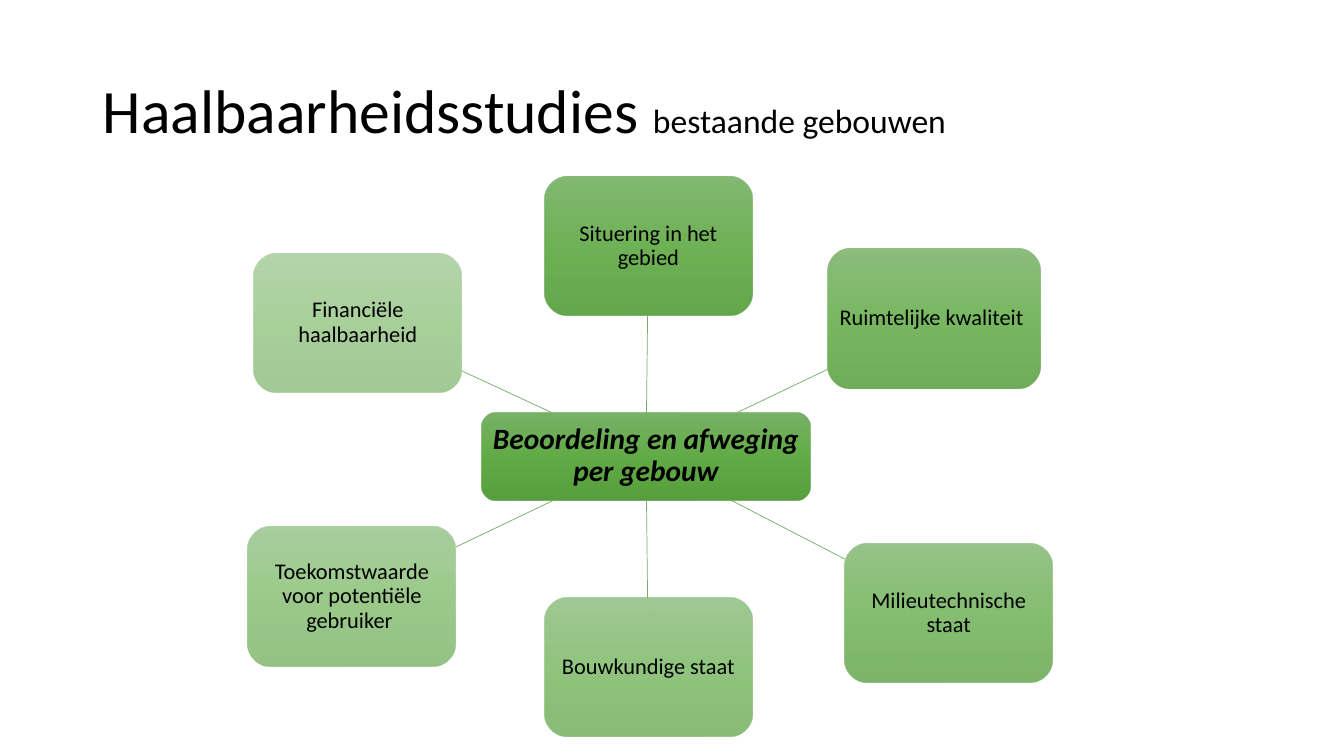
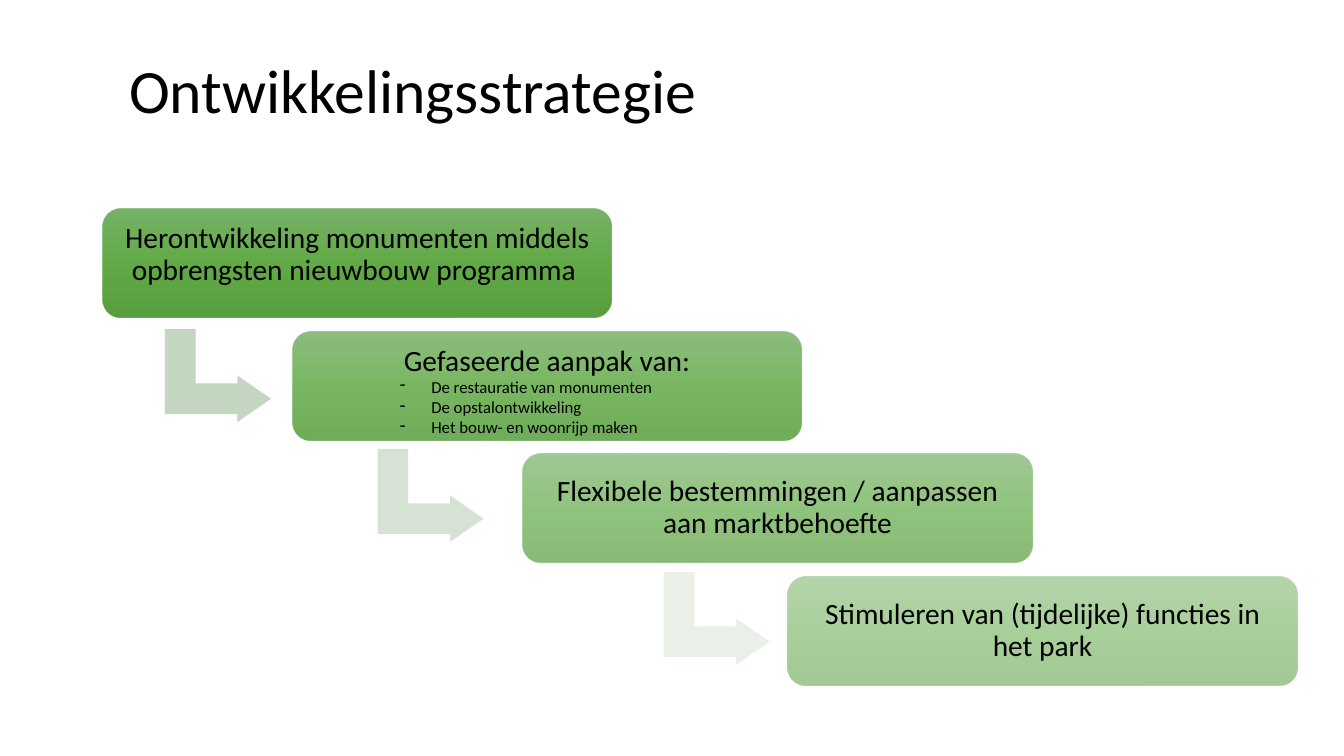
"""Build two slides: a hub of assessment criteria and a staircase of strategy steps."""
from pptx import Presentation
from pptx.dml.color import RGBColor
from pptx.enum.shapes import MSO_CONNECTOR, MSO_SHAPE
from pptx.enum.text import MSO_ANCHOR, MSO_AUTO_SIZE, PP_ALIGN
from pptx.oxml import parse_xml
from pptx.oxml.ns import nsdecls, qn
from pptx.oxml.xmlchemy import OxmlElement
from pptx.util import Cm, Pt

FONT = "Calibri"
BLACK = "000000"
LINE = "76AB69"
GRADIENT = [(0, "6BAA59"), (50, "52A334"), (100, "46952A")]

HUB = ("Beoordeling en afweging per gebouw", (12.14, 10.39, 8.28, 2.21))
CRITERIA = [
    ("Situering in het gebied", (13.72, 4.45, 5.24, 3.51)),
    ("Ruimtelijke kwaliteit ", (20.85, 6.27, 5.38, 3.51)),
    ("Milieutechnische staat", (21.29, 13.69, 5.24, 3.51)),
    ("Bouwkundige staat", (13.72, 15.06, 5.24, 3.51)),
    ("Toekomstwaarde voor potentiële gebruiker ", (6.25, 13.28, 5.24, 3.51)),
    ("Financiële haalbaarheid", (6.4, 6.38, 5.24, 3.51)),
]

STEPS = [
    ("Herontwikkeling monumenten middels opbrengsten nieuwbouw programma ", 2.59, MSO_ANCHOR.TOP),
    ("Gefaseerde aanpak van:", 7.37, MSO_ANCHOR.TOP),
    ("Flexibele bestemmingen / aanpassen aan marktbehoefte", 13.18, MSO_ANCHOR.MIDDLE),
    ("Stimuleren van (tijdelijke) functies in het park", 19.86, MSO_ANCHOR.MIDDLE),
]
STEP_TOP, STEP_PITCH, STEP_W, STEP_H = 5.26, 3.09, 12.83, 2.74
ARROWS = [(4.32, 8.13, "C3D6BF"), (9.68, 11.15, "D6E3D4"), (16.89, 14.25, "EAF0E8")]
ARROW_W, ARROW_H = 2.34, 2.67
PHASES = ["De restauratie van monumenten", "De opstalontwikkeling", "Het bouw- en woonrijp maken"]
PHASES_BOX = (9.83, 9.37, 7.7, 1.8)


def rgb(value):
    """Return a colour from a hex string."""
    return RGBColor.from_string(value)


def cm(values):
    """Convert numbers to centimetre lengths."""
    return [Cm(v) for v in values]


def add_run(p, text, size, bold=None, italic=None):
    """Append one formatted run to a paragraph."""
    r = p.add_run()
    r.text = text
    r.font.name, r.font.size = FONT, Pt(size)
    r.font.bold, r.font.italic = bold, italic
    r.font.color.rgb = rgb(BLACK)


def add_slide(prs, box, runs):
    """Add a title-only slide with its title placed and filled."""
    s = prs.slides.add_slide(prs.slide_layouts[5])
    title = s.shapes.title
    title.left, title.top, title.width, title.height = cm(box)
    tf = title.text_frame
    tf.auto_size, tf.vertical_anchor = MSO_AUTO_SIZE.NONE, MSO_ANCHOR.MIDDLE
    p = tf.paragraphs[0]
    p.alignment, p.line_spacing = PP_ALIGN.LEFT, 0.9
    for text, size in runs:
        add_run(p, text, size)
    return s


def fade(i, last):
    """Return the opacity of box i, from 90 down to 50 percent."""
    return 90 - 40 * i / last


def add_box(s, box, text, size, opacity, margin, anchor=MSO_ANCHOR.MIDDLE, strong=None):
    """Add a rounded box with a translucent green gradient and centred text."""
    sp = s.shapes.add_shape(MSO_SHAPE.ROUNDED_RECTANGLE, *cm(box))
    stops = "".join(
        f'<a:gs pos="{pos * 1000}"><a:srgbClr val="{color}">'
        f'<a:alpha val="{round(opacity * 1000)}"/></a:srgbClr></a:gs>'
        for pos, color in GRADIENT)
    sp._element.spPr.append(parse_xml(
        f'<a:gradFill {nsdecls("a")} rotWithShape="1"><a:gsLst>{stops}</a:gsLst>'
        '<a:lin ang="5400000" scaled="0"/></a:gradFill>'))
    sp.line.fill.background()
    sp.shadow.inherit = False
    tf = sp.text_frame
    tf.word_wrap, tf.vertical_anchor = True, anchor
    tf.margin_left = tf.margin_right = tf.margin_top = tf.margin_bottom = Cm(margin)
    p = tf.paragraphs[0]
    p.alignment, p.line_spacing = PP_ALIGN.CENTER, 0.9
    add_run(p, text, size, strong, strong)


def center(box):
    """Return the middle of a box."""
    left, top, width, height = box
    return left + width / 2, top + height / 2


def edge_point(box, target):
    """Return where the line from a box's middle to the target leaves the box."""
    x, y = center(box)
    dx, dy = target[0] - x, target[1] - y
    t = min(half / abs(d) for half, d in ((box[2] / 2, dx), (box[3] / 2, dy)) if d)
    return x + t * dx, y + t * dy


def add_spoke(s, start_box, end_box):
    """Connect the facing edges of two boxes."""
    start, end = edge_point(start_box, center(end_box)), edge_point(end_box, center(start_box))
    line = s.shapes.add_connector(MSO_CONNECTOR.STRAIGHT, *cm(start + end))
    line.line.color.rgb, line.line.width = rgb(LINE), Pt(0.5)
    line._element.spPr.append(OxmlElement("a:effectLst"))


def add_arrow(s, left, top, color):
    """Add an arrow that goes down and then right."""
    sp = s.shapes.add_shape(MSO_SHAPE.BENT_UP_ARROW, *cm((left, top, ARROW_W, ARROW_H)))
    sp.rotation = 90
    for i, value in enumerate((0.33, 0.25, 0.36)):
        sp.adjustments[i] = value
    sp.fill.solid()
    sp.fill.fore_color.rgb = rgb(color)
    sp.line.fill.background()
    sp.shadow.inherit = False


def add_dashes(s, box, items):
    """Add a text box with a dashed list."""
    tf = s.shapes.add_textbox(*cm(box)).text_frame
    tf.word_wrap = True
    for i, item in enumerate(items):
        p = tf.add_paragraph() if i else tf.paragraphs[0]
        pPr = p._p.get_or_add_pPr()
        pPr.set("marL", str(Cm(0.79)))
        pPr.set("indent", str(-Cm(0.79)))
        bullet = OxmlElement("a:buChar")
        bullet.set("char", "-")
        pPr.append(bullet)
        add_run(p, item, 12)


def build_hub(prs):
    """Build the slide with criteria around a hub."""
    s = add_slide(prs, (2.34, 1.02, 29.21, 3.68),
                  [("Haalbaarheidsstudies ", 44), ("bestaande gebouwen", 24)])
    text, hub = HUB
    add_box(s, hub, text, 21, fade(0, len(CRITERIA)), 0.16, strong=True)
    for i, (text, box) in enumerate(CRITERIA, 1):
        add_spoke(s, hub, box)
        add_box(s, box, text, 16, fade(i, len(CRITERIA)), 0.11)


def build_staircase(prs):
    """Build the slide with steps going down to the right."""
    s = add_slide(prs, (3, 0.76, 30.48, 3.18), [("Ontwikkelingsstrategie", 44)])
    for arrow in ARROWS:
        add_arrow(s, *arrow)
    for i, (text, left, anchor) in enumerate(STEPS):
        box = (left, STEP_TOP + i * STEP_PITCH, STEP_W, STEP_H)
        add_box(s, box, text, 21, fade(i, len(STEPS) - 1), 0.23, anchor)
    add_dashes(s, PHASES_BOX, PHASES)


def main():
    """Create and save the presentation."""
    prs = Presentation()
    prs.slide_width, prs.slide_height = Cm(33.87), Cm(19.05)
    build_hub(prs)
    build_staircase(prs)
    prs.save("out.pptx")


if __name__ == "__main__":
    main()
